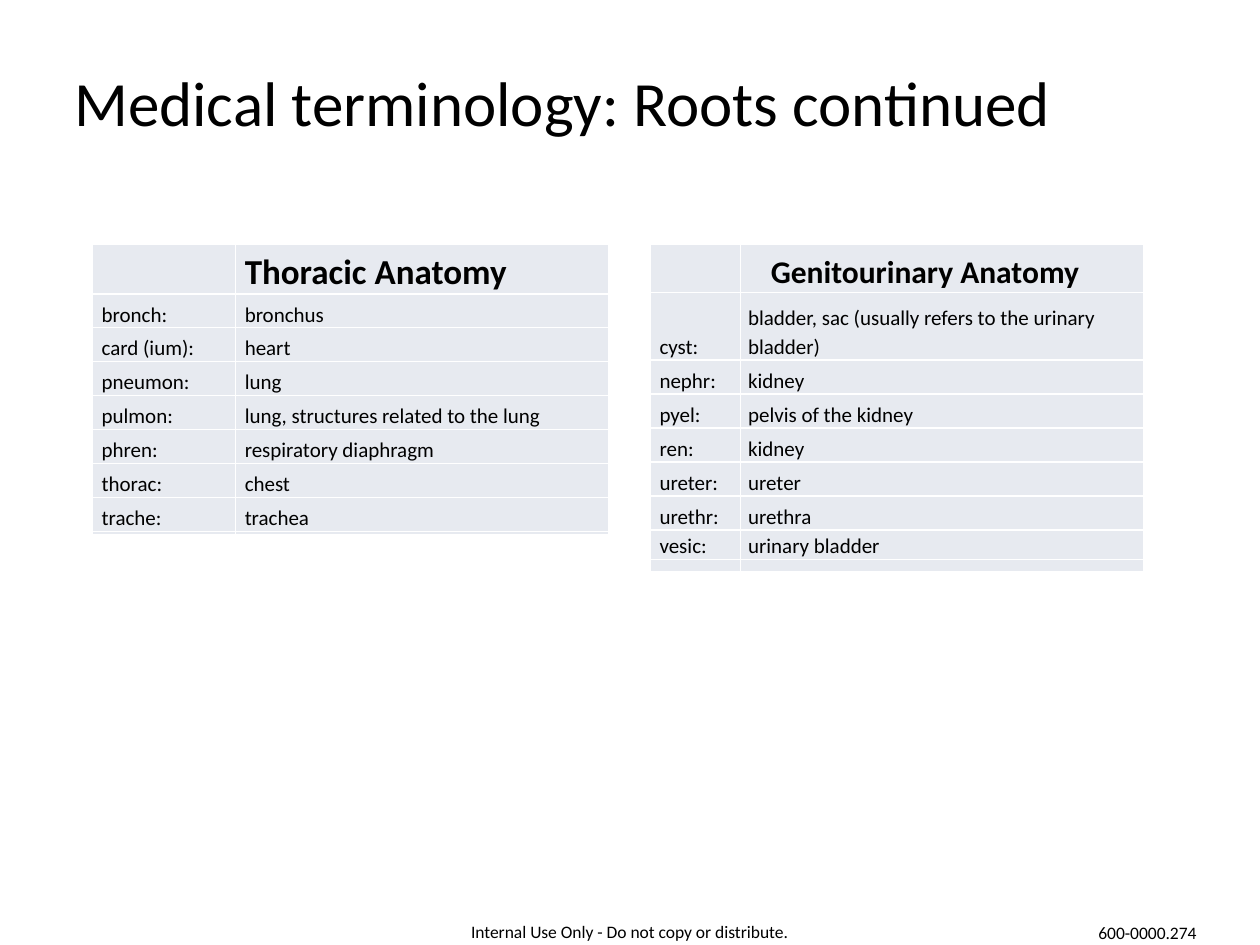
from dataclasses import dataclass

from lxml.etree import SubElement
from pptx import Presentation
from pptx.dml.color import RGBColor
from pptx.enum.text import MSO_ANCHOR as Anchor, PP_ALIGN as Align
from pptx.oxml.ns import qn
from pptx.util import Pt

FONT = "Calibri"
BLACK, WHITE, PALE = "000000", "FFFFFF", "E7EAF0"


@dataclass
class RootTable:
    heading: str
    heading_size: float
    heading_indent: float
    meaning_indent: float
    left: float
    col_widths: list[float]
    row_heights: list[float]
    roots: list[tuple[str, str]]


TOP = 139.7
ROOT_INDENT = 5.2
ROW = 19.4
HEADER_ROW = 27.4

TABLES = [
    RootTable(
        "Thoracic Anatomy", 20, 5.2, 5.2, 52.9, [81.8, 213],
        [HEADER_ROW] + [ROW] * 7 + [2],
        [("bronch:", "bronchus"),
         ("card (ium):", "heart"),
         ("pneumon:", "lung"),
         ("pulmon:", "lung, structures related to the lung"),
         ("phren:", "respiratory diaphragm"),
         ("thorac:", "chest"),
         ("trache:", "trachea")]),
    RootTable(
        "Genitourinary Anatomy", 18, 17.3, 4.3, 371.7, [51.5, 230.4],
        [HEADER_ROW, 2 * ROW] + [ROW] * 5 + [16, 7],
        [("cyst:", "bladder, sac (usually refers to the urinary bladder)"),
         ("nephr:", "kidney"),
         ("pyel:", "pelvis of the kidney"),
         ("ren:", "kidney"),
         ("ureter:", "ureter"),
         ("urethr:", "urethra"),
         ("vesic:", "urinary bladder")]),
]


def rgb(color: str) -> RGBColor:
    return RGBColor.from_string(color)


def format_runs(p, size: float, bold: bool = False) -> None:
    for r in p.runs:
        r.font.name = FONT
        r.font.size = Pt(size)
        r.font.bold = bold
        r.font.color.rgb = rgb(BLACK)


def style_cell(cell) -> None:
    """Give the cell white borders, a pale fill and no margins."""
    cell.margin_left = cell.margin_right = 0
    cell.margin_top = cell.margin_bottom = 0
    cell.vertical_anchor = Anchor.BOTTOM
    tcPr = cell._tc.get_or_add_tcPr()
    for side in ("lnL", "lnR", "lnT", "lnB"):
        ln = SubElement(tcPr, qn(f"a:{side}"), w=str(Pt(1)))
        fill = SubElement(ln, qn("a:solidFill"))
        SubElement(fill, qn("a:srgbClr"), val=WHITE)
    cell.fill.solid()
    cell.fill.fore_color.rgb = rgb(PALE)


def write_cell(cell, text: str, size: float, indent: float, bold: bool) -> None:
    p = cell.text_frame.paragraphs[0]
    if not text:
        # A tiny end mark lets the row be as low as it should
        SubElement(p._p, qn("a:endParaRPr"), sz="100")
        return
    p.text = text
    p.line_spacing = 1.15
    p._p.get_or_add_pPr().set("marL", str(Pt(indent)))
    p._p.get_or_add_pPr().set("indent", "0")
    format_runs(p, size, bold)


def add_root_table(slide, spec: RootTable) -> None:
    rows = [("", spec.heading), *spec.roots, ("", "")]
    table = slide.shapes.add_table(
        len(rows), 2, Pt(spec.left), Pt(TOP),
        Pt(sum(spec.col_widths)), Pt(sum(spec.row_heights))).table
    table.first_row = table.horz_banding = False
    for column, width in zip(table.columns, spec.col_widths):
        column.width = Pt(width)
    for i, (texts, height) in enumerate(zip(rows, spec.row_heights)):
        table.rows[i].height = Pt(height)
        header = i == 0
        size = spec.heading_size if header else 12
        last_indent = spec.heading_indent if header else spec.meaning_indent
        for j, indent in enumerate((ROOT_INDENT, last_indent)):
            cell = table.cell(i, j)
            style_cell(cell)
            write_cell(cell, texts[j], size, indent, header)


def add_footer(slide, text: str, left: float, top: float, width: float,
               align: Align, wrap: bool) -> None:
    tf = slide.shapes.add_textbox(Pt(left), Pt(top), Pt(width), Pt(19.4)).text_frame
    tf.word_wrap = wrap
    tf.text = text
    p = tf.paragraphs[0]
    p.alignment = align
    format_runs(p, 10)


def add_title(slide, text: str) -> None:
    title = slide.shapes.title
    title.left, title.top = Pt(42.5), Pt(36)
    title.width, title.height = Pt(634.3), Pt(79.2)
    tf = title.text_frame
    tf.margin_left = tf.margin_right = tf.margin_top = tf.margin_bottom = 0
    tf.vertical_anchor = Anchor.TOP
    tf.text = text
    p = tf.paragraphs[0]
    p.alignment = Align.LEFT
    format_runs(p, 36)


def main() -> None:
    prs = Presentation()
    prs.slide_width, prs.slide_height = Pt(720), Pt(540)
    slide = prs.slides.add_slide(prs.slide_layouts[5])
    add_title(slide, "Medical terminology: Roots continued")
    for spec in TABLES:
        add_root_table(slide, spec)
    add_footer(slide, "Internal Use Only - Do not copy or distribute.",
               257.8, 522.7, 203.8, Align.CENTER, True)
    add_footer(slide, "600-0000.274", 620.6, 523.4, 72, Align.LEFT, False)
    prs.save("out.pptx")


if __name__ == "__main__":
    main()
